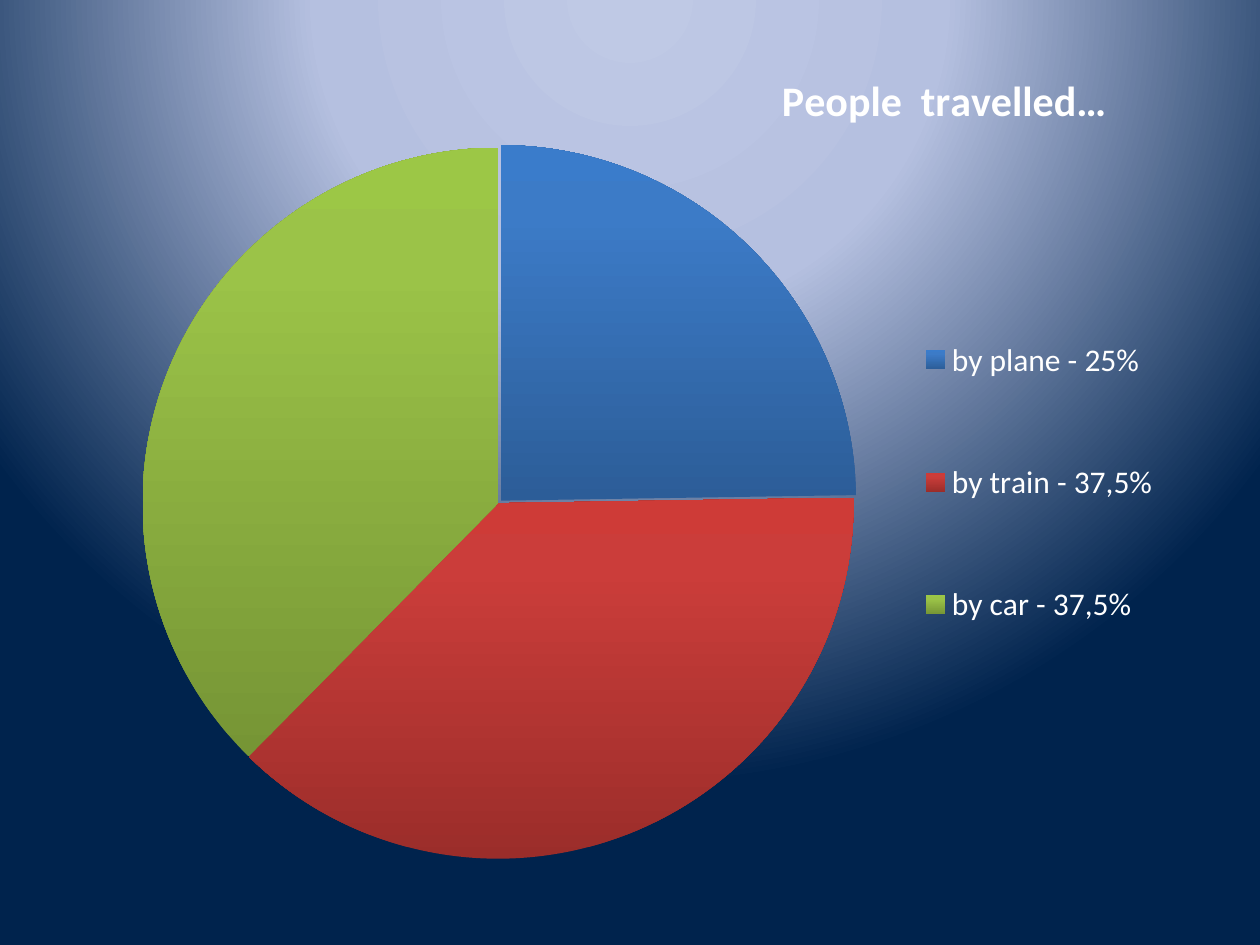
from lxml import etree
from pptx import Presentation
from pptx.chart.data import CategoryChartData
from pptx.dml.color import RGBColor
from pptx.enum.chart import XL_CHART_TYPE as ChartType, XL_LEGEND_POSITION as LegendPos
from pptx.oxml.ns import qn
from pptx.util import Pt


def paint_gradient(fill, root, stops, direction):
    """Fill with (percent, hex) stops; direction is the lin or path element."""
    fill.gradient()
    gradient = list(root.iter(qn("a:gradFill")))[-1]
    gradient.clear()
    gradient.set("rotWithShape", "1")
    stop_list = etree.SubElement(gradient, qn("a:gsLst"))
    for percent, color in stops:
        stop = etree.SubElement(stop_list, qn("a:gs"), pos=str(percent * 1000))
        etree.SubElement(stop, qn("a:srgbClr"), val=color)
    gradient.append(direction)


def place(part, index, **fractions):
    """Set a manual layout, in fractions of the chart, as child number index."""
    for old in part.findall(qn("c:layout")):
        part.remove(old)
    layout = etree.Element(qn("c:layout"))
    manual = etree.SubElement(layout, qn("c:manualLayout"))
    if part.tag == qn("c:plotArea"):
        etree.SubElement(manual, qn("c:layoutTarget"), val="inner")
    for axis in ("x", "y"):
        etree.SubElement(manual, qn(f"c:{axis}Mode"), val="edge")
    for key, value in fractions.items():
        etree.SubElement(manual, qn(f"c:{key}"), val=str(value))
    part.insert(index, layout)


prs = Presentation()
prs.slide_width, prs.slide_height = Pt(720), Pt(540)
slide = prs.slides.add_slide(prs.slide_layouts[6])

# Background: a glow from above the slide
glow = etree.Element(qn("a:path"), path="circle")
etree.SubElement(glow, qn("a:fillToRect"), l="50000", t="-80000", r="50000", b="180000")
paint_gradient(slide.background.fill, slide.element,
               [(0, "BFC9E5"), (40, "B5C0E0"), (100, "00234D")], glow)

# Pie chart
travel = CategoryChartData()
travel.categories = ["by plane - 25%", "by train - 37,5%", "by car - 37,5%"]
travel.add_series("Series 1", (25, 38, 38))
chart = slide.shapes.add_chart(ChartType.PIE, Pt(28), Pt(22.3), Pt(658), Pt(478), travel).chart
chart.font.name = "Calibri"
chart.font.size = Pt(18)
chart.font.color.rgb = RGBColor.from_string("FFFFFF")
pie = chart.plots[0]
pie.vary_by_categories = True
chart_root = chart.element
place(chart_root.find(".//" + qn("c:plotArea")), 0, x=0.08, y=0.13, w=0.62, h=0.85)

# Slices, dark at the bottom and light at the top
slice_colors = [
    ("2C5D98", "3C7BC7", "3A7CCB"),
    ("9B2D2A", "CB3D3A", "CE3B37"),
    ("769535", "9BC348", "9CC746"),
]
for index, colors in enumerate(slice_colors):
    slice_format = pie.series[0].points[index].format
    upward = etree.Element(qn("a:lin"), ang="16200000", scaled="0")
    paint_gradient(slice_format.fill, chart_root, zip((0, 80, 100), colors), upward)
    slice_format.line.fill.background()

# The plane slice stands out slightly
plane = chart_root.find(".//" + qn("c:dPt"))
plane.find(qn("c:spPr")).addprevious(etree.Element(qn("c:explosion"), val="1"))

# Title
chart.has_title = True
title = chart.chart_title
title.include_in_layout = False
title.text_frame.text = "People  travelled…"
title_font = title.text_frame.paragraphs[0].runs[0].font
title_font.name = "Calibri"
title_font.size = Pt(24)
title_font.bold = True
title_font.color.rgb = RGBColor.from_string("FFFFFF")
place(chart_root.find(".//" + qn("c:title")), 1, x=0.63, y=0.03)

# Legend
chart.has_legend = True
chart.legend.position = LegendPos.RIGHT
chart.legend.include_in_layout = False
place(chart_root.find(".//" + qn("c:legend")), 1, x=0.75, y=0.26, w=0.22, h=0.54)

prs.save("out.pptx")
